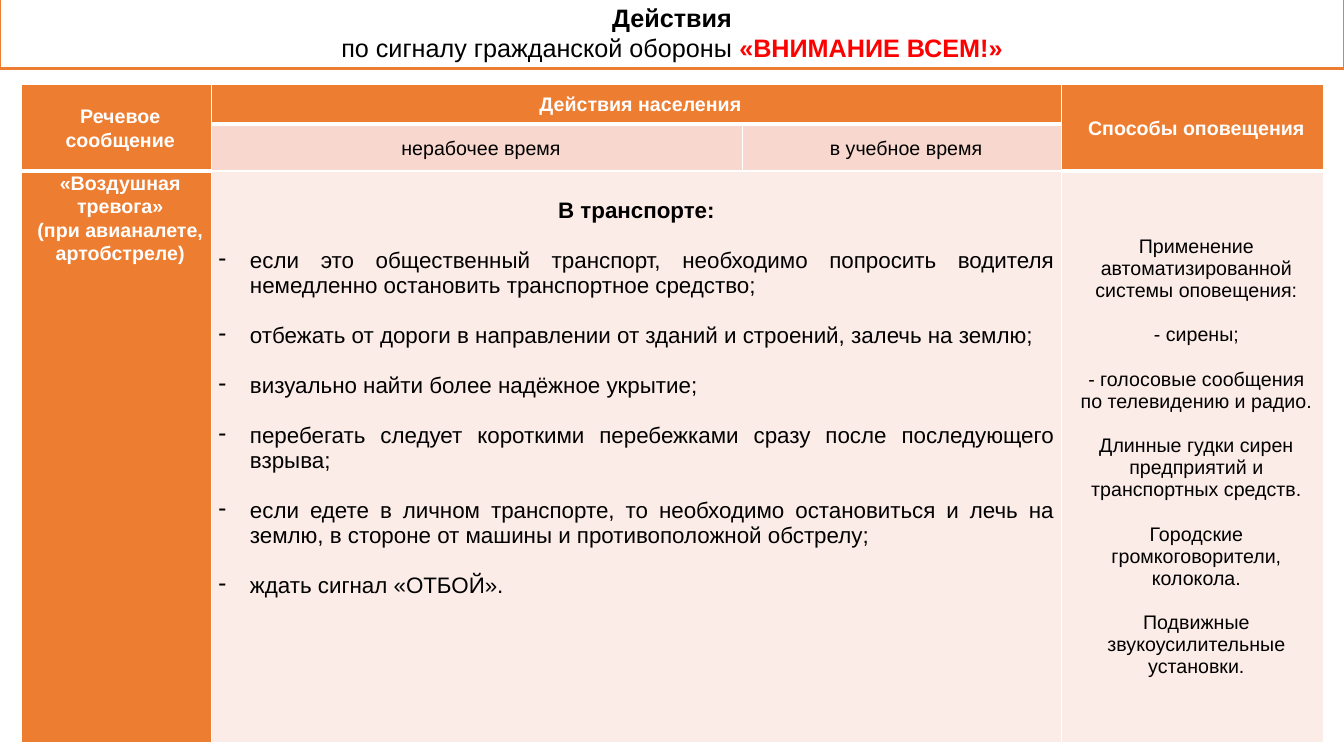
"""Build a slide on what to do when the civil defence signal sounds."""
import pptx
import pptx.chart.data
import pptx.dml.color
import pptx.enum.text
import pptx.oxml
import pptx.oxml.ns
import pptx.util
from lxml import etree

Cm, Pt = pptx.util.Cm, pptx.util.Pt
ALIGN = pptx.enum.text.PP_ALIGN
ANCHOR = pptx.enum.text.MSO_ANCHOR
ORANGE, ROSE, PALE = "ED7D31", "F8D7CE", "FCECE8"
WHITE, BLACK, RED = "FFFFFF", "000000", "FF0000"


def color(value):
    return pptx.dml.color.RGBColor.from_string(value)


def style(para, size, ink=BLACK, bold=False, align=ALIGN.CENTER):
    para.alignment = align
    para.font.name = "Arial"
    para.font.size = Pt(size)
    para.font.bold = bold
    para.font.color.rgb = color(ink)


deck = pptx.Presentation()
deck.slide_width, deck.slide_height = Cm(33.87), Cm(19.05)
page = deck.slides.add_slide(deck.slide_layouts[5])

title = page.shapes.title
title.left, title.top, title.width, title.height = Cm(0), Cm(-0.08), Cm(33.87), Cm(1.8)
title.fill.solid()
title.fill.fore_color.rgb = color(WHITE)
title.line.color.rgb = color(ORANGE)
title.line.width = Pt(2)
frame = title.text_frame
frame.auto_size = pptx.enum.text.MSO_AUTO_SIZE.NONE
frame.vertical_anchor = ANCHOR.MIDDLE
frame.text = "Действия\nпо сигналу гражданской обороны "
style(frame.paragraphs[0], 18, bold=True)
style(frame.paragraphs[1], 18)
signal = frame.paragraphs[1].add_run()
signal.text = "«ВНИМАНИЕ ВСЕМ!»"
signal.font.bold = True
signal.font.color.rgb = color(RED)

table = page.shapes.add_table(3, 4, Cm(0.53), Cm(2.13), Cm(32.82), Cm(16.58)).table
for column, width in zip(table.columns, (4.8, 13.39, 8.03, 6.6)):
    column.width = Cm(width)
for row, height in zip(table.rows, (0.99, 1.19, 14.4)):
    row.height = Cm(height)
for first, last in (((0, 0), (1, 0)), ((0, 1), (0, 2)), ((0, 3), (1, 3)), ((2, 1), (2, 2))):
    table.cell(*first).merge(table.cell(*last))

for column in range(4):
    properties = table.cell(0, column)._tc.get_or_add_tcPr()
    for side, points in (("L", 1), ("R", 1), ("T", 1), ("B", 3)):
        border = etree.SubElement(properties, pptx.oxml.ns.qn(f"a:ln{side}"), w=str(Pt(points)))
        fill = etree.SubElement(border, pptx.oxml.ns.qn("a:solidFill"))
        etree.SubElement(fill, pptx.oxml.ns.qn("a:srgbClr"), val=WHITE)

labels = (
    (0, 0, "Речевое сообщение", ORANGE, WHITE),
    (0, 1, "Действия населения", ORANGE, WHITE),
    (0, 3, "Способы оповещения", ORANGE, WHITE),
    (1, 1, "нерабочее время", ROSE, BLACK),
    (1, 2, "в учебное время", ROSE, BLACK),
    (2, 0, "«Воздушная тревога»\n(при авианалете, артобстреле)", ORANGE, WHITE),
)
steps = (
    "В транспорте:",
    "если это общественный транспорт, необходимо попросить водителя немедленно остановить транспортное средство;",
    "отбежать от дороги в направлении от зданий и строений, залечь на землю;",
    "визуально найти более надёжное укрытие;",
    "перебегать следует короткими перебежками сразу после последующего взрыва;",
    "если едете в личном транспорте, то необходимо остановиться и лечь на землю, "
    "в стороне от машины и противоположной обстрелу;",
    "ждать сигнал «ОТБОЙ».",
)
alerts = (
    "Применение автоматизированной системы оповещения:",
    "- сирены;",
    "- голосовые сообщения по телевидению и радио.",
    "Длинные гудки сирен предприятий и транспортных средств.",
    "Городские громкоговорители, колокола.",
    "Подвижные звукоусилительные установки.",
)
contents = labels + (
    (2, 1, "\n".join(steps), PALE, BLACK),
    (2, 3, "\n".join(alerts), PALE, BLACK),
)
for row, column, text, background, ink in contents:
    cell = table.cell(row, column)
    cell.margin_left = cell.margin_right = Cm(0.18)
    cell.margin_top = cell.margin_bottom = 0
    cell.vertical_anchor = ANCHOR.TOP if row == 2 and column < 3 else ANCHOR.MIDDLE
    cell.fill.solid()
    cell.fill.fore_color.rgb = color(background)
    cell.text = text
    if background == PALE:
        continue
    for para in cell.text_frame.paragraphs:
        para._p.get_or_add_pPr().set("marL", str(Cm(0.2)))
        para.line_spacing = 1.07
        style(para, 14, ink, ink == WHITE)

actions = table.cell(2, 1)
actions.margin_top = Cm(0.69)
heading, *items = actions.text_frame.paragraphs
style(heading, 16, bold=True)
for para in items:
    properties = para._p.get_or_add_pPr()
    properties.set("marL", str(Cm(0.79)))
    properties.set("indent", str(Cm(-0.79)))
    etree.SubElement(properties, pptx.oxml.ns.qn("a:buChar"), char="-")
    para.space_before = Pt(18)
    style(para, 16, align=ALIGN.JUSTIFY)

for index, para in enumerate(table.cell(2, 3).text_frame.paragraphs):
    para._p.get_or_add_pPr().set("marL", str(Cm(0.2)))
    if index:
        para.space_before = Pt(16)
    style(para, 14)

deck.save("out.pptx")
